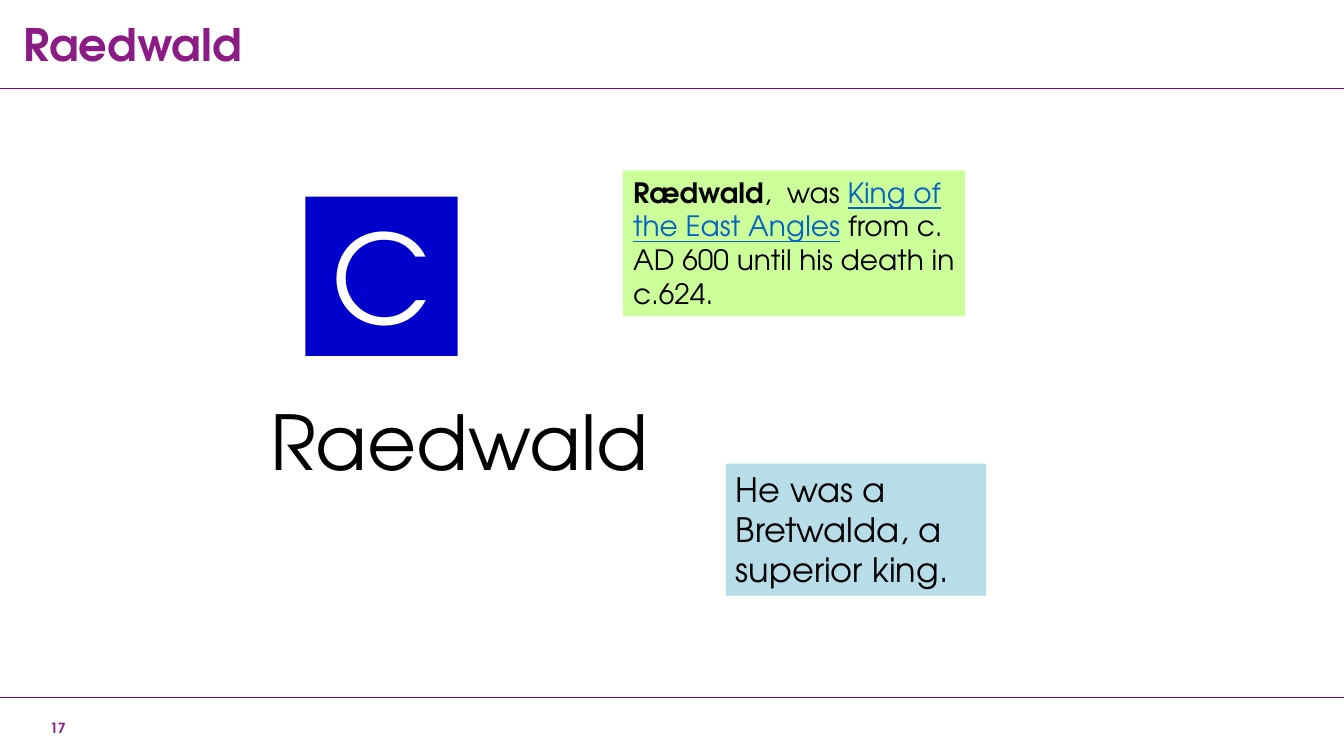
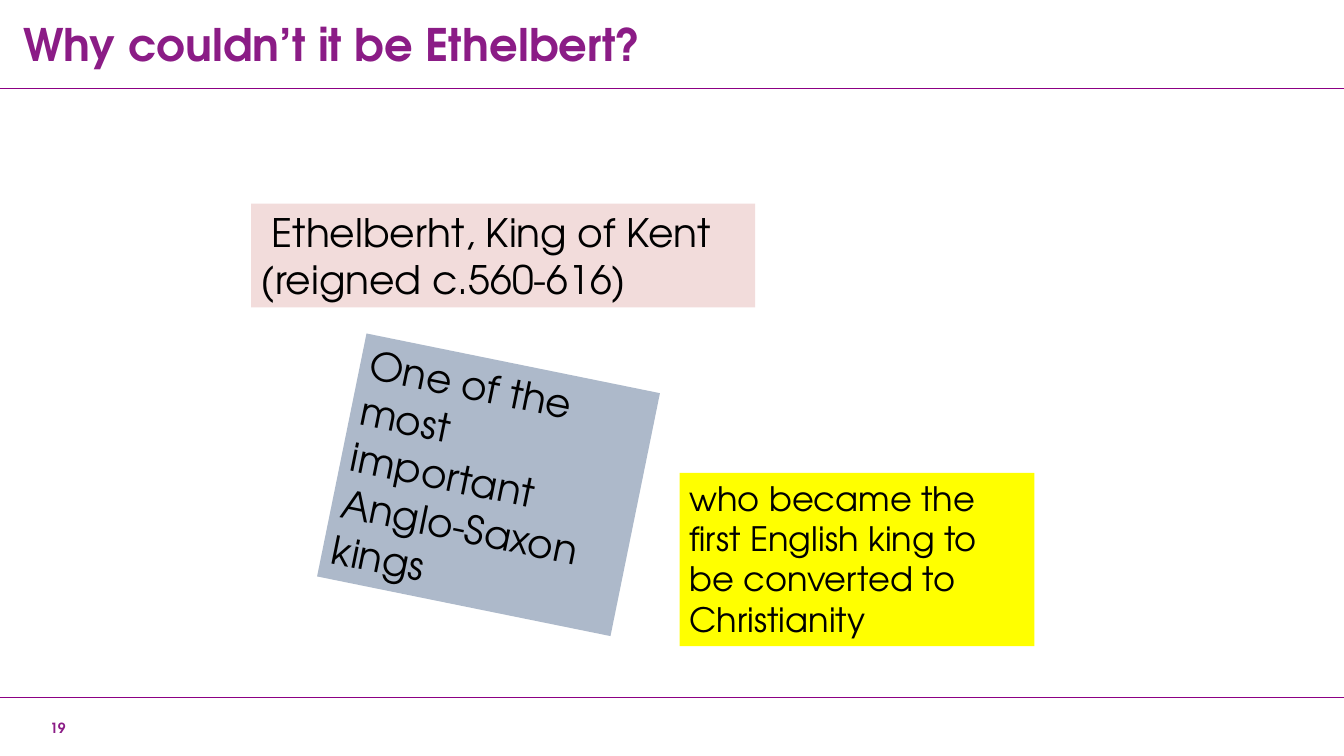
import pptx
import pptx.util
import pptx.dml.color
import pptx.enum.shapes
import pptx.enum.text
import lxml.etree

Inches = pptx.util.Inches
ALIGN = pptx.enum.text.PP_ALIGN
ANCHOR = pptx.enum.text.MSO_ANCHOR

# Shared look
FONT = "TeX Gyre Adventor"
PURPLE = "8B1C86"
RULE = "8C0084"
BLACK = "000000"
WHITE = "FFFFFF"
LINK = "0563C1"
WIDTH, HEIGHT = 13.33, 7.5


def color(code):
    return pptx.dml.color.RGBColor.from_string(code)


def write(shape, text, size=24, ink=BLACK, bold=False, align=ALIGN.LEFT,
          anchor=ANCHOR.TOP, spacing=None):
    """Fill a shape with one paragraph: a string, or (string, changes) pairs."""
    frame = shape.text_frame
    frame.word_wrap = True
    frame.auto_size = pptx.enum.text.MSO_AUTO_SIZE.NONE
    frame.vertical_anchor = anchor
    para = frame.paragraphs[0]
    para.alignment = align
    para.space_before = pptx.util.Pt(0)
    if spacing:
        para.line_spacing = spacing
    parts = [(text, {})] if isinstance(text, str) else text
    for words, change in parts:
        run = para.add_run()
        run.text = words
        font = run.font
        font.name = FONT
        font.size = pptx.util.Pt(size)
        font.bold = change.get("bold", bold)
        font.underline = change.get("line", False)
        font.color.rgb = color(change.get("ink", ink))


def label(slide, box, text, **style):
    """Plain text box."""
    shape = slide.shapes.add_textbox(*map(Inches, box))
    write(shape, text, **style)


def card(slide, box, fill, text, turn=0, **style):
    """Filled rectangle with text."""
    kind = pptx.enum.shapes.MSO_SHAPE.RECTANGLE
    shape = slide.shapes.add_shape(kind, *map(Inches, box))
    shape.shadow.inherit = False
    shape.fill.solid()
    shape.fill.fore_color.rgb = color(fill)
    shape.line.fill.background()
    shape.rotation = turn
    write(shape, text, **style)


def rule(slide, top):
    """Thin line across the whole slide."""
    kind = pptx.enum.shapes.MSO_CONNECTOR.STRAIGHT
    line = slide.shapes.add_connector(
        kind, 0, Inches(top), Inches(WIDTH), Inches(top))
    line.line.color.rgb = color(RULE)
    line.line.width = pptx.util.Pt(0.5)
    props = line._element.spPr
    lxml.etree.SubElement(props, pptx.oxml.ns.qn("a:effectLst"))


def page(deck, title, number):
    """New slide with title, two rules and page number."""
    slide = deck.slides.add_slide(deck.slide_layouts[5])
    head = slide.shapes.title
    head.left, head.top, head.width, head.height = map(
        Inches, (0.13, 0.14, 9.62, 0.66))
    write(head, title, size=32, ink=PURPLE, bold=True,
          anchor=ANCHOR.MIDDLE, spacing=0.9)
    for top in (0.88, 6.92):
        rule(slide, top)
    label(slide, (-0.25, 7.09, 1, 0.27), str(number), size=10, ink=PURPLE,
          bold=True, align=ALIGN.RIGHT)
    return slide


def raedwald(deck):
    slide = page(deck, "Raedwald", 17)
    # Answer letter and name
    card(slide, (3.03, 1.95, 1.51, 1.58), "0000CC", "C", size=88, ink=WHITE,
         align=ALIGN.CENTER)
    label(slide, (2.58, 3.87, 5.55, 1.01), "Raedwald", size=54)
    # Facts
    card(slide, (6.18, 1.69, 3.39, 1.45), "CCFF99", [
        ("Rædwald", {"bold": True}),
        (",  was ", {}),
        ("King of the East Angles", {"ink": LINK, "line": True}),
        (" from c. AD 600 until his death in c.624.", {}),
    ], size=20)
    card(slide, (7.2, 4.6, 2.58, 1.31), "B7DEE8",
         "He was a Bretwalda, a superior king.")


def ethelbert(deck):
    slide = page(deck, "Why couldn’t it be Ethelbert?", 19)
    card(slide, (2.49, 2.02, 5, 1.03), "F2DCDB",
         " Ethelberht, King of Kent (reigned c.560-616)", size=28)
    card(slide, (6.74, 4.69, 3.52, 1.72), "FFFF00",
         "who became the first English king to be converted to Christianity")
    card(slide, (3.36, 3.58, 2.97, 2.46), "ADB9CA",
         "One of the most important Anglo-Saxon kings", turn=11.5, size=28)


def main():
    deck = pptx.Presentation()
    deck.slide_width = Inches(WIDTH)
    deck.slide_height = Inches(HEIGHT)
    raedwald(deck)
    ethelbert(deck)
    deck.save("out.pptx")


if __name__ == "__main__":
    main()
